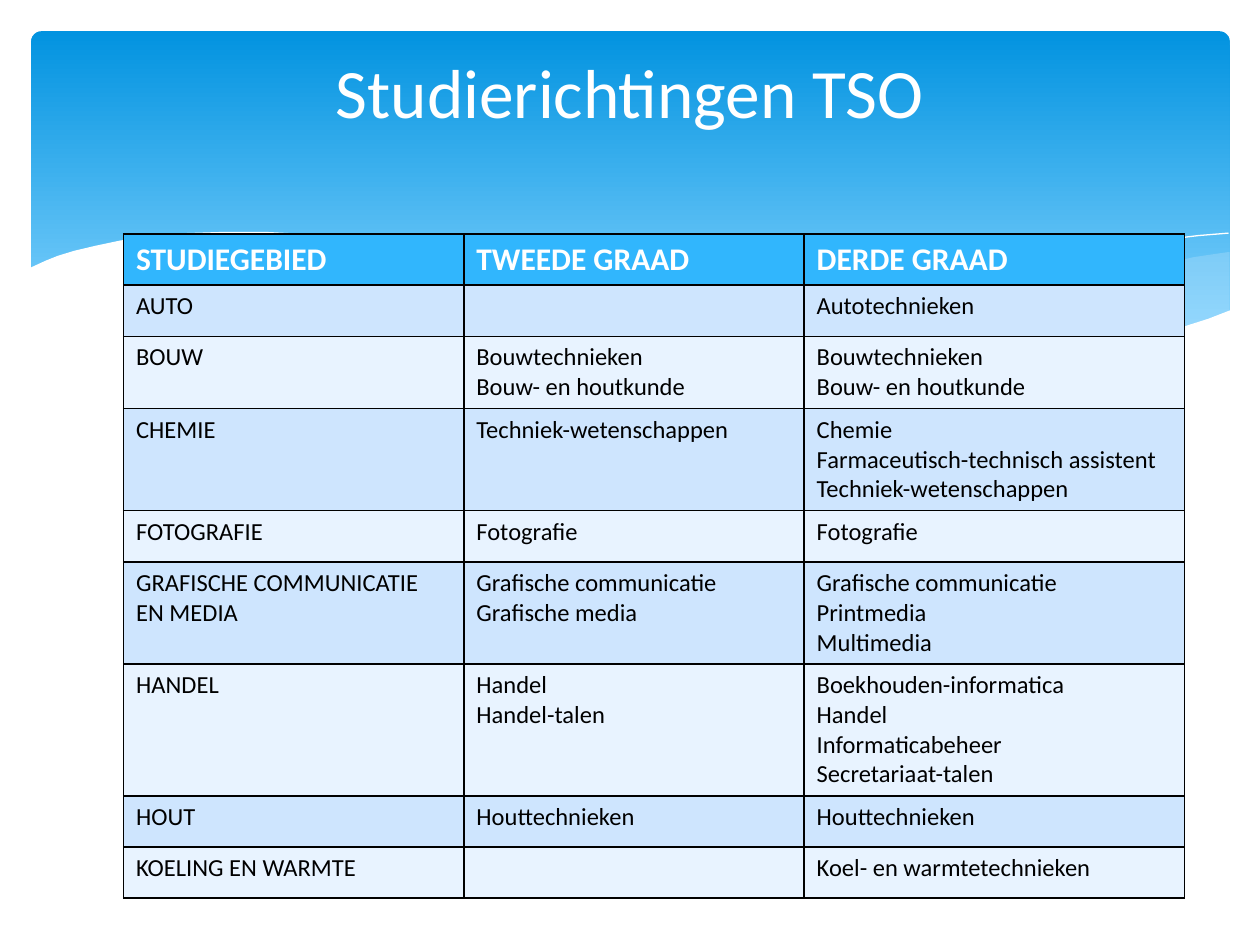
"""Build the slide with the TSO study programmes per field and grade."""
from lxml import etree
from pptx import Presentation
from pptx.dml.color import RGBColor
from pptx.enum.shapes import MSO_SHAPE
from pptx.enum.text import MSO_ANCHOR, PP_ALIGN
from pptx.oxml.ns import qn
from pptx.util import Cm, Pt

ROUNDED = MSO_SHAPE.ROUNDED_RECTANGLE
MIDDLE = MSO_ANCHOR.MIDDLE
CENTER = PP_ALIGN.CENTER

WHITE = RGBColor(0xFF, 0xFF, 0xFF)
BLACK = RGBColor(0x00, 0x00, 0x00)
DEEP_BLUE = RGBColor(0x02, 0x93, 0xE0)
SKY_BLUE = RGBColor(0x83, 0xD3, 0xFE)
WAVE_BLUE = RGBColor(0xC6, 0xE7, 0xFC)
HEADER_BLUE = RGBColor(0x31, 0xB6, 0xFD)
BAND_DARK = RGBColor(0xCE, 0xE5, 0xFE)
BAND_LIGHT = RGBColor(0xE8, 0xF3, 0xFF)

POINT_SCALE = Cm(2.54) / 100

RIGHT_WAVE = [
    (975, 200), (948, 204), (921, 210), (891, 216), (861, 223), (805, 237),
    (753, 248), (706, 257), (661, 265), (691, 269), (719, 272), (745, 275),
    (769, 277), (803, 278), (835, 277), (863, 275), (889, 272), (913, 267),
    (935, 262), (949, 257), (976, 247), (976, 200)]
MIDDLE_WAVE = [
    (893, 273), (866, 269), (807, 260), (741, 247), (668, 231), (629, 222),
    (584, 211), (541, 203), (502, 196), (465, 191), (420, 187), (380, 185),
    (344, 186), (313, 188), (286, 191), (323, 196), (362, 203), (404, 211),
    (449, 222), (530, 240), (601, 255), (650, 264), (695, 270), (736, 275),
    (773, 277), (807, 278), (838, 278), (867, 276), (893, 273)]
LONG_CREST = [
    (309, 195), (328, 192), (353, 189), (387, 187), (433, 187), (469, 189),
    (510, 192), (556, 197), (608, 204), (665, 213), (727, 226), (795, 241),
    (869, 261), (907, 272)]
RIGHT_CREST = [
    (613, 257), (653, 246), (695, 235), (748, 223), (806, 210), (866, 199),
    (910, 192), (951, 187), (975, 185)]
WHITE_WAVE = [
    (977, 246), (959, 253), (940, 259), (920, 265), (899, 269), (875, 273),
    (850, 275), (823, 277), (793, 276), (761, 275), (726, 272), (688, 268),
    (648, 262), (603, 254), (555, 245), (503, 233), (447, 220), (391, 207),
    (340, 197), (292, 190), (250, 186), (211, 184), (177, 184), (146, 185),
    (119, 187), (95, 191), (76, 195), (59, 199), (46, 203), (36, 207),
    (23, 213), (23, 329), (977, 329)]

COLUMN_WIDTHS = [6.86, 6.86, 7.67]
ROW_HEIGHT = 1.03
PROGRAMMES = [
    ("STUDIEGEBIED", "TWEEDE GRAAD", "DERDE GRAAD"),
    ("AUTO", "", "Autotechnieken"),
    ("BOUW", "Bouwtechnieken\nBouw- en houtkunde",
     "Bouwtechnieken\nBouw- en houtkunde"),
    ("CHEMIE", "Techniek-wetenschappen",
     "Chemie\nFarmaceutisch-technisch assistent\nTechniek-wetenschappen"),
    ("FOTOGRAFIE", "Fotografie", "Fotografie"),
    ("GRAFISCHE COMMUNICATIE EN MEDIA",
     "Grafische communicatie\nGrafische media",
     "Grafische communicatie\nPrintmedia\nMultimedia"),
    ("HANDEL", "Handel\nHandel-talen",
     "Boekhouden-informatica\nHandel\nInformaticabeheer\nSecretariaat-talen"),
    ("HOUT", "Houttechnieken", "Houttechnieken"),
    ("KOELING EN WARMTE", "", "Koel- en warmtetechnieken"),
]


class SlideBuilder:
    """Holds the text style and the current slide."""

    font_name = "Calibri"

    def __init__(self, slide):
        self.slide = slide
        self.shapes = slide.shapes

    def style(self, font, size, color, bold=False):
        font.name = self.font_name
        font.size = Pt(size)
        font.bold = bold
        font.color.rgb = color

    def banner(self, left, top, width, height):
        shape = self.shapes.add_shape(
            ROUNDED, Cm(left), Cm(top), Cm(width), Cm(height))
        shape.adjustments[0] = 0.03
        shape.shadow.inherit = False
        shape.line.fill.background()
        shape.fill.gradient()
        shape.fill.gradient_angle = 270
        stops = zip(shape.fill.gradient_stops, (0, 0.9), (DEEP_BLUE, SKY_BLUE))
        for stop, position, color in stops:
            stop.position = position
            stop.color.rgb = color

    def freeform(self, points, close):
        builder = self.shapes.build_freeform(*points[0], scale=POINT_SCALE)
        builder.add_line_segments(points[1:], close=close)
        shape = builder.convert_to_shape()
        shape.shadow.inherit = False
        return shape

    def wave(self, points, color, opacity=100):
        shape = self.freeform(points, True)
        shape.line.fill.background()
        shape.fill.solid()
        shape.fill.fore_color.rgb = color
        if opacity < 100:
            color_element = next(shape._element.spPr.iter(qn("a:srgbClr")))
            alpha = etree.SubElement(color_element, qn("a:alpha"))
            alpha.set("val", str(opacity * 1000))

    def crest(self, points):
        shape = self.freeform(points, False)
        shape.fill.background()
        shape.line.color.rgb = WHITE
        shape.line.width = Pt(0)

    def title(self, text, left, top, width, height):
        title = self.shapes.title
        title.left, title.top = Cm(left), Cm(top)
        title.width, title.height = Cm(width), Cm(height)
        title.text_frame.vertical_anchor = MIDDLE
        paragraph = title.text_frame.paragraphs[0]
        paragraph.alignment = CENTER
        run = paragraph.add_run()
        run.text = text
        self.style(run.font, 39.6, WHITE)
        self.shapes._spTree.append(title._element)

    def borders(self, cell):
        properties = cell._tc.get_or_add_tcPr()
        for side in ("a:lnL", "a:lnR", "a:lnT", "a:lnB"):
            line = etree.SubElement(properties, qn(side), w=str(Pt(1)))
            fill = etree.SubElement(line, qn("a:solidFill"))
            etree.SubElement(fill, qn("a:srgbClr"), val=str(BLACK))

    def cell(self, cell, text, fill_color, size, color, bold):
        self.borders(cell)
        cell.fill.solid()
        cell.fill.fore_color.rgb = fill_color
        frame = cell.text_frame
        for index, line in enumerate(text.split("\n") if text else []):
            paragraph = frame.add_paragraph() if index else frame.paragraphs[0]
            run = paragraph.add_run()
            run.text = line
            self.style(run.font, size, color, bold)

    def table(self, rows, left, top):
        table = self.shapes.add_table(
            len(rows), len(COLUMN_WIDTHS), Cm(left), Cm(top),
            Cm(sum(COLUMN_WIDTHS)), Cm(ROW_HEIGHT * len(rows))).table
        for column, width in zip(table.columns, COLUMN_WIDTHS):
            column.width = Cm(width)
        for row_index, texts in enumerate(rows):
            table.rows[row_index].height = Cm(ROW_HEIGHT)
            band = BAND_DARK if row_index % 2 else BAND_LIGHT
            look = (band, 14, BLACK, False) if row_index else (
                HEADER_BLUE, 18, WHITE, True)
            for column_index, text in enumerate(texts):
                self.cell(table.cell(row_index, column_index), text, *look)


def main():
    presentation = Presentation()
    presentation.slide_width = Cm(25.4)
    presentation.slide_height = Cm(19.05)
    layout = presentation.slide_layouts[5]
    builder = SlideBuilder(presentation.slides.add_slide(layout))
    builder.banner(0.63, 0.63, 24.16, 6.86)
    builder.wave(RIGHT_WAVE, WAVE_BLUE, 29)
    builder.wave(MIDDLE_WAVE, WAVE_BLUE, 40)
    builder.crest(LONG_CREST)
    builder.crest(RIGHT_CREST)
    builder.wave(WHITE_WAVE, WHITE)
    builder.title("Studierichtingen TSO", 1.27, 0.94, 22.86, 1.78)
    builder.table(PROGRAMMES, 2.49, 4.72)
    presentation.save("out.pptx")


if __name__ == "__main__":
    main()
